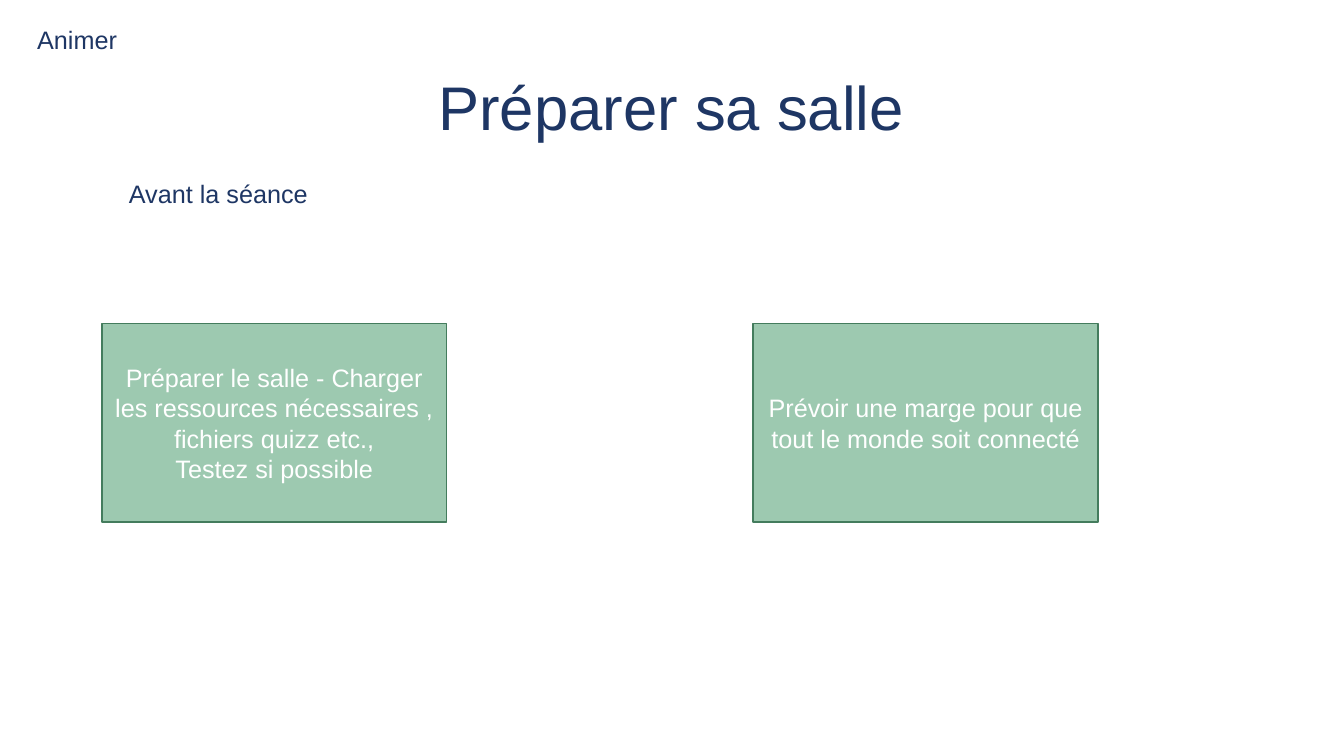
from pptx import Presentation
from pptx.dml.color import RGBColor
from pptx.enum.shapes import MSO_SHAPE as Shape
from pptx.enum.text import MSO_ANCHOR as Anchor, PP_ALIGN as Align
from pptx.util import Inches, Pt


def color(value):
    return RGBColor.from_string(value)


class SlideBuilder:
    FONT = "Arial"
    NAVY, WHITE = "1E3664", "FFFFFF"
    GREEN, DARK_GREEN = "9DC9B0", "447C5D"

    def __init__(self, page):
        self.page = page

    def set_text(self, shape, lines, size, text_color, align, anchor, spacing=None):
        frame = shape.text_frame
        frame.word_wrap = True
        frame.vertical_anchor = anchor
        frame.text = "\n".join(lines)
        for para in frame.paragraphs:
            para.alignment = align
            para.line_spacing = spacing
            para.font.name = self.FONT
            para.font.size = Pt(size)
            para.font.color.rgb = color(text_color)

    def label(self, text, left, top, width, height,
              size=18, anchor=Anchor.TOP, spacing=None):
        box = self.page.shapes.add_textbox(
            Inches(left), Inches(top), Inches(width), Inches(height))
        self.set_text(box, [text], size, self.NAVY, Align.LEFT, anchor, spacing)

    def card(self, lines, left, top, width, height):
        box = self.page.shapes.add_shape(
            Shape.RECTANGLE,
            Inches(left), Inches(top), Inches(width), Inches(height))
        box.shadow.inherit = False
        box.fill.solid()
        box.fill.fore_color.rgb = color(self.GREEN)
        box.line.color.rgb = color(self.DARK_GREEN)
        box.line.width = Pt(1)
        self.set_text(box, lines, 18, self.WHITE, Align.CENTER, Anchor.MIDDLE)


def main():
    deck = Presentation()
    deck.slide_width, deck.slide_height = Inches(13.33), Inches(7.5)
    builder = SlideBuilder(deck.slides.add_slide(deck.slide_layouts[6]))

    builder.label("Préparer sa salle", 4.25, 0.39, 7.36, 1.45,
                  size=44, anchor=Anchor.MIDDLE, spacing=0.8)
    builder.label("Avant la séance", 1.18, 1.72, 4.78, 0.4)

    steps = [
        (1.01, ["Préparer le salle - Charger les ressources nécessaires , "
                "fichiers quizz etc.,", "Testez si possible"]),
        (7.47, ["Prévoir une marge pour que tout le monde soit connecté"]),
    ]
    for left, lines in steps:
        builder.card(lines, left, 3.21, 3.42, 1.97)

    builder.label("Animer", 0.27, 0.19, 1.03, 0.4)
    deck.save("out.pptx")


if __name__ == "__main__":
    main()
